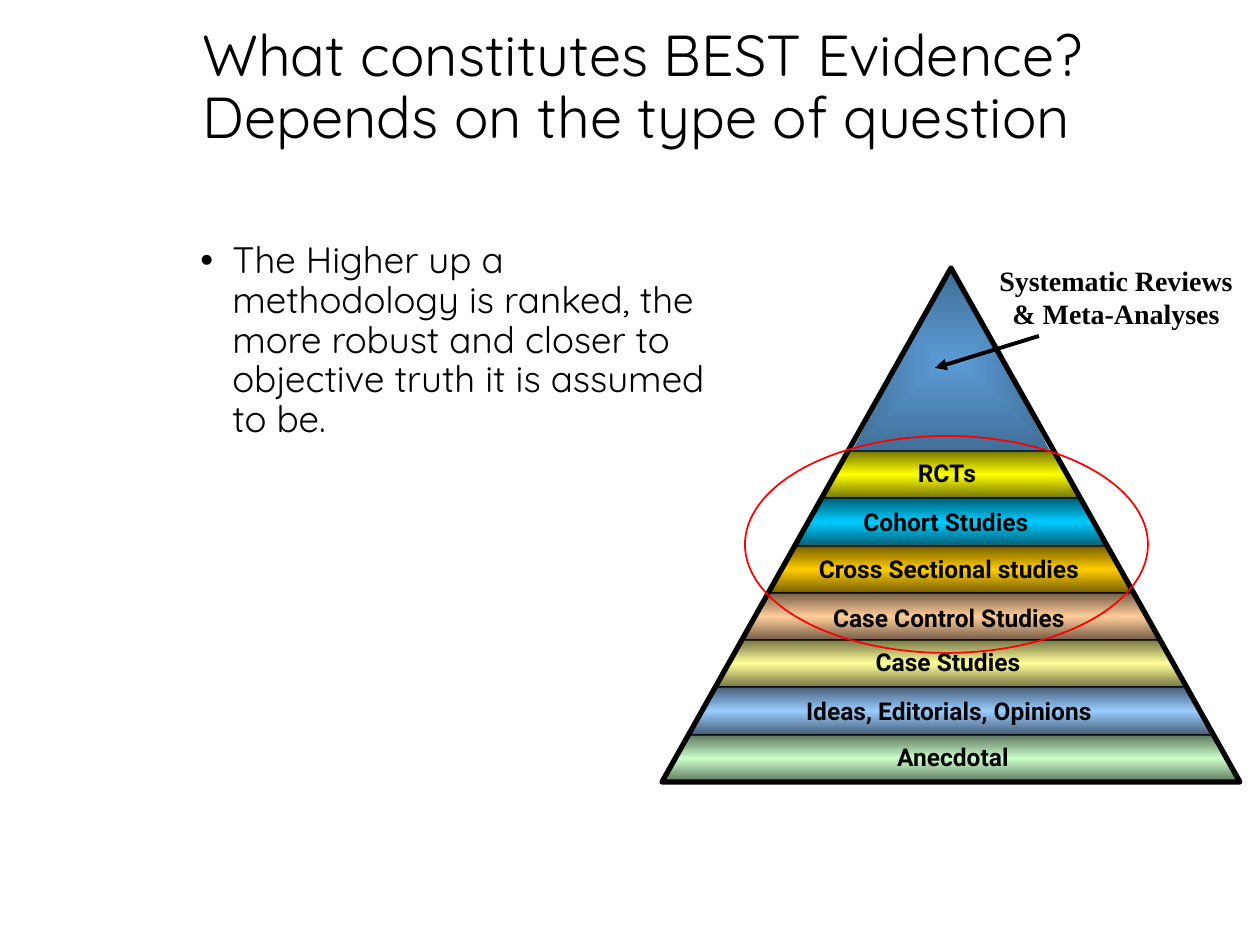
from lxml import etree
from pptx import Presentation
from pptx.dml.color import RGBColor
from pptx.enum.shapes import MSO_CONNECTOR, MSO_SHAPE
from pptx.enum.text import MSO_ANCHOR, PP_ALIGN
from pptx.oxml.ns import qn
from pptx.util import Emu, Pt

LEFT, CENTER = PP_ALIGN.LEFT, PP_ALIGN.CENTER
TOP = MSO_ANCHOR.TOP
TRIANGLE, OVAL = MSO_SHAPE.ISOSCELES_TRIANGLE, MSO_SHAPE.OVAL
STRAIGHT = MSO_CONNECTOR.STRAIGHT

SCALE = 914400 / 126  # EMU per px

BLACK = RGBColor(0x00, 0x00, 0x00)
INK = RGBColor(0x02, 0x02, 0x02)
RED = RGBColor(0xFF, 0x00, 0x00)
PEAK = RGBColor(0x5B, 0x9B, 0xD5)
PEAK_EDGE = RGBColor(0x41, 0x6F, 0x98)

# Label, middle colour, edge colour, label offset from the band centre (px)
BANDS = [
    ("RCTs", RGBColor(0xFF, 0xFF, 0x00), RGBColor(0x76, 0x76, 0x00), -4, -2),
    ("Cohort Studies", RGBColor(0x00, 0xCC, 0xFF), RGBColor(0x00, 0x5E, 0x76), -5, 0),
    ("Cross Sectional studies", RGBColor(0xFF, 0xCC, 0x00), RGBColor(0x76, 0x5E, 0x00), -2, 0),
    ("Case Control Studies", RGBColor(0xFF, 0xCC, 0x99), RGBColor(0x76, 0x5E, 0x47), -2, 1),
    ("Case Studies", RGBColor(0xFF, 0xFF, 0x99), RGBColor(0x76, 0x76, 0x47), -3, -2),
    ("Ideas, Editorials, Opinions", RGBColor(0x99, 0xCC, 0xFF), RGBColor(0x47, 0x5E, 0x76), -2, 0),
    ("Anecdotal", RGBColor(0xCC, 0xFF, 0xCC), RGBColor(0x5E, 0x76, 0x5E), 2, -2),
]


def px(value):
    return Emu(round(value * SCALE))


def add_text(slide, box, text, font, size, color=BLACK, bold=False, align=LEFT,
             wrap=True, spacing=None, before=None, bullet_indent=None):
    """Add a text box; newlines split paragraphs, vertical tabs break lines."""
    sp = slide.shapes.add_textbox(*map(px, box))
    tf = sp.text_frame
    tf.word_wrap = wrap
    tf.vertical_anchor = TOP
    tf.text = text
    for p in tf.paragraphs:
        p.alignment = align
        p.line_spacing = spacing
        p.space_before = before
        for r in p.runs:
            r.font.name, r.font.size, r.font.bold = font, Pt(size), bold
            r.font.color.rgb = color
        if bullet_indent:
            pPr = p._p.get_or_add_pPr()
            pPr.set("marL", str(px(bullet_indent)))
            pPr.set("indent", str(-px(bullet_indent)))
            etree.SubElement(pPr, qn("a:buFont")).set("typeface", "Arial")
            etree.SubElement(pPr, qn("a:buChar")).set("char", "•")
    return sp


def set_gradient(sp, stops, from_center=False):
    """Fill with (percent, colour) stops, downwards or from the centre."""
    sp.fill.gradient()
    grad = sp._element.spPr.find(qn("a:gradFill"))
    for child in list(grad):
        grad.remove(child)
    gs_list = etree.SubElement(grad, qn("a:gsLst"))
    for percent, color in stops:
        gs = etree.SubElement(gs_list, qn("a:gs"), pos=str(percent * 1000))
        etree.SubElement(gs, qn("a:srgbClr"), val=str(color))
    if from_center:
        path = etree.SubElement(grad, qn("a:path"), path="shape")
        etree.SubElement(path, qn("a:fillToRect"), {side: "50000" for side in "ltrb"})
    else:
        etree.SubElement(grad, qn("a:lin"), ang="5400000", scaled="1")


def add_outline(slide, kind, box, color, width):
    sp = slide.shapes.add_shape(kind, *map(px, box))
    sp.shadow.inherit = False
    sp.fill.background()
    sp.line.color.rgb = color
    sp.line.width = Pt(width)
    return sp


def add_arrow(slide, start, end):
    line = slide.shapes.add_connector(STRAIGHT, *map(px, start + end))
    line.line.color.rgb = BLACK
    line.line.width = Pt(2.25)
    etree.SubElement(line.line._get_or_add_ln(), qn("a:tailEnd"), type="triangle")
    etree.SubElement(line._element.spPr, qn("a:effectLst"))


def add_band(slide, center, top, bottom, half_top, half_bottom, middle, edge):
    builder = slide.shapes.build_freeform(
        round(center - half_bottom), round(bottom), scale=SCALE)
    builder.add_line_segments([
        (round(center - half_top), round(top)),
        (round(center + half_top), round(top)),
        (round(center + half_bottom), round(bottom))], close=True)
    sp = builder.convert_to_shape()
    sp.shadow.inherit = False
    set_gradient(sp, [(0, edge), (50, middle), (100, edge)])
    sp.line.color.rgb = BLACK
    sp.line.width = Pt(0.75)


def add_pyramid(slide, x, y, w, h):
    center = x + w / 2
    peak_h = 183
    band_h = (h - peak_h) / len(BANDS)

    # Peak
    peak = slide.shapes.add_shape(
        TRIANGLE, *map(px, (center - 99, y + 4, 198, peak_h - 4)))
    peak.shadow.inherit = False
    peak.line.fill.background()
    set_gradient(peak, [(0, PEAK), (100, PEAK_EDGE)], from_center=True)

    # Bands follow the slope of the outline
    for i, (_, middle, edge, _, _) in enumerate(BANDS):
        top = peak_h + i * band_h
        bottom = top + band_h
        add_band(slide, center, y + top, y + bottom,
                 w / 2 * top / h, w / 2 * bottom / h, middle, edge)

    add_outline(slide, TRIANGLE, (x, y, w, h), INK, 3)

    # Band labels
    label_w, label_h = 350, 42
    for i, (label, _, _, dx, dy) in enumerate(BANDS):
        middle_y = y + peak_h + (i + 0.5) * band_h
        add_text(slide, (center - label_w / 2 + dx, middle_y - label_h / 2 + dy,
                         label_w, label_h),
                 label, "Roboto", 14, INK, bold=True, align=CENTER, wrap=False)

    # Callout for the peak and ring around the primary studies
    add_arrow(slide, (x + 377, y + 68), (x + 273, y + 100))
    add_text(slide, (x + 324, y - 11, 260, 81),
             "Systematic Reviews\n& Meta-Analyses", "Times New Roman", 16,
             bold=True, align=CENTER, wrap=False)
    add_outline(slide, OVAL, (x + 83, y + 168, 403, 217), RED, 1)


def main():
    prs = Presentation()
    prs.slide_width, prs.slide_height = px(1260), px(945)
    slide = prs.slides.add_slide(prs.slide_layouts[6])

    # Body and title
    add_text(slide, (188, 236, 557, 624),
             "The Higher up a methodology is ranked, the more robust and closer "
             "to objective truth it is assumed to be.",
             "Quicksand", 21, spacing=0.9, before=Pt(7.5), bullet_indent=32)
    add_text(slide, (190, 20, 1134, 158),
             "What constitutes BEST Evidence?\vDepends on the type of question",
             "Quicksand", 33, spacing=0.9)

    add_pyramid(slide, 662, 268, 578, 514)
    prs.save("out.pptx")


if __name__ == "__main__":
    main()
